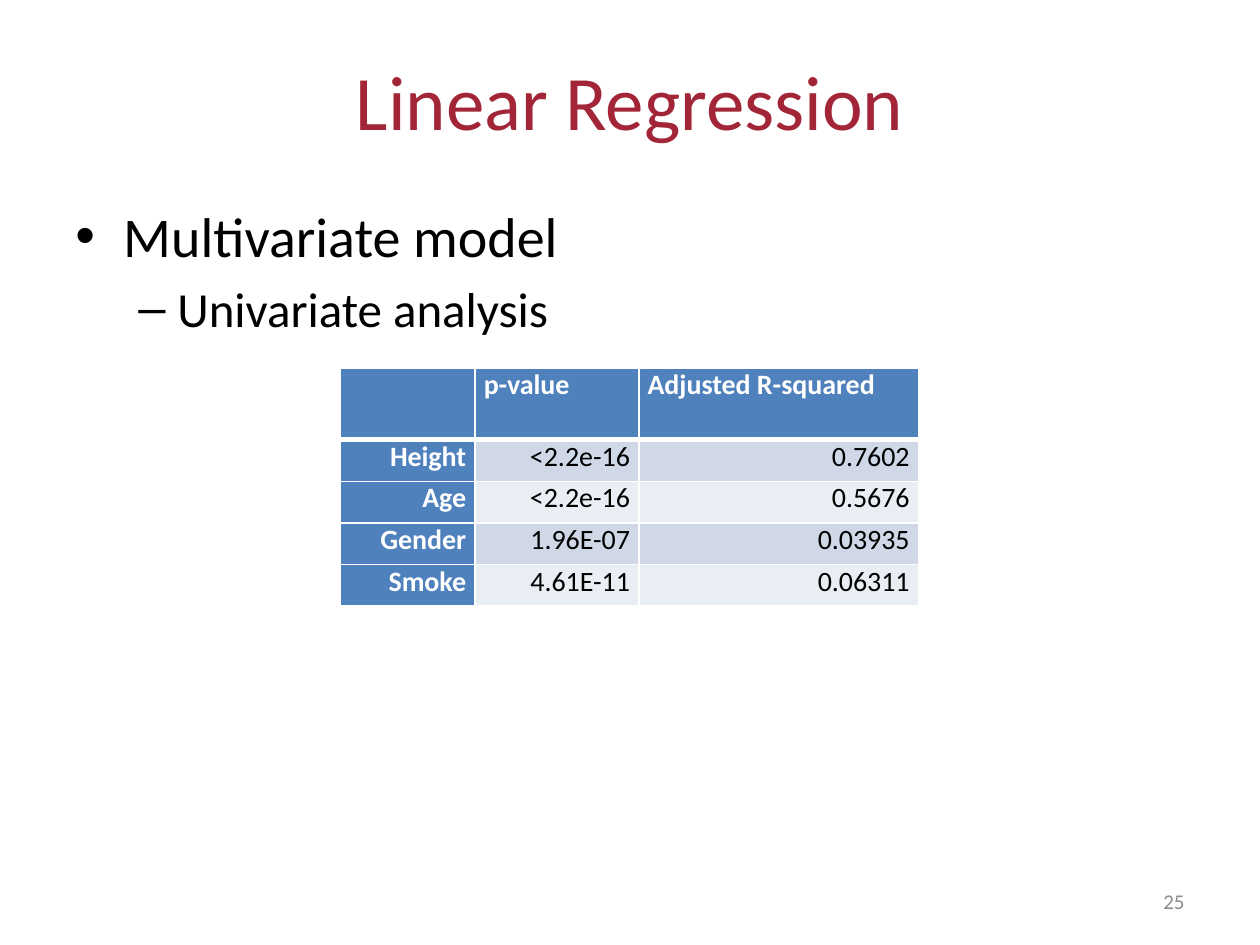
from dataclasses import dataclass

from lxml import etree
from pptx import Presentation
from pptx.dml.color import RGBColor
from pptx.enum.text import MSO_ANCHOR, PP_ALIGN
from pptx.oxml.ns import qn
from pptx.util import Inches, Pt

LEFT, CENTER, RIGHT = PP_ALIGN.LEFT, PP_ALIGN.CENTER, PP_ALIGN.RIGHT
TOP, MIDDLE = MSO_ANCHOR.TOP, MSO_ANCHOR.MIDDLE
TITLE_ONLY_LAYOUT = 5


@dataclass(frozen=True)
class Theme:
    font: str = "Calibri"
    title: str = "A32638"
    text: str = "000000"
    muted: str = "8C8C8C"
    header: str = "4F81BD"
    light: str = "FFFFFF"
    bands: tuple = ("D0D8E8", "E9EDF4")
    title_size: int = 44
    body_sizes: tuple = (32, 28)
    table_size: int = 16
    number_size: int = 12
    border: int = 1
    header_border: int = 3


def write_text(paragraph, text, *, font, size, color, bold=False, align=LEFT):
    paragraph.alignment = align
    run = paragraph.add_run()
    run.text = text
    run.font.name = font
    run.font.size = Pt(size)
    run.font.bold = bold
    run.font.color.rgb = RGBColor.from_string(color)


def set_bullet(paragraph, symbol, indent, hanging):
    properties = paragraph._p.get_or_add_pPr()
    properties.set("marL", str(Inches(indent)))
    properties.set("indent", str(-Inches(hanging)))
    font = etree.SubElement(properties, qn("a:buFont"))
    font.set("typeface", "Arial")
    etree.SubElement(properties, qn("a:buChar")).set("char", symbol)


def set_borders(cell, color, widths):
    properties = cell._tc.get_or_add_tcPr()
    for side, width in widths.items():
        line = etree.SubElement(properties, qn(f"a:ln{side}"), w=str(Pt(width)))
        fill = etree.SubElement(line, qn("a:solidFill"))
        etree.SubElement(fill, qn("a:srgbClr"), val=color)


class SlideBuilder:
    """Places elements by shares of the slide's width and height."""

    def __init__(self, presentation, theme):
        self.theme = theme
        self.width = presentation.slide_width
        self.height = presentation.slide_height
        layout = presentation.slide_layouts[TITLE_ONLY_LAYOUT]
        self.slide = presentation.slides.add_slide(layout)

    def box(self, left, top, width, height):
        return (round(left * self.width), round(top * self.height),
                round(width * self.width), round(height * self.height))

    def title(self, text, area):
        shape = self.slide.shapes.title
        shape.left, shape.top, shape.width, shape.height = self.box(*area)
        shape.text_frame.vertical_anchor = MIDDLE
        write_text(shape.text_frame.paragraphs[0], text, font=self.theme.font,
                   size=self.theme.title_size, color=self.theme.title, align=CENTER)

    def text_box(self, area, anchor=TOP):
        frame = self.slide.shapes.add_textbox(*self.box(*area)).text_frame
        frame.word_wrap = True
        frame.vertical_anchor = anchor
        return frame

    def bullets(self, items, area):
        bullet_styles = (("•", 0.38, 0.38), ("–", 0.81, 0.31))
        frame = self.text_box(area)
        for index, (level, text) in enumerate(items):
            paragraph = frame.add_paragraph() if index else frame.paragraphs[0]
            size = self.theme.body_sizes[level]
            paragraph.level = level
            if index:
                paragraph.space_before = Pt(0.2 * size)
            set_bullet(paragraph, *bullet_styles[level])
            write_text(paragraph, text, font=self.theme.font, size=size,
                       color=self.theme.text)

    def slide_number(self, text, area):
        frame = self.text_box(area, MIDDLE)
        write_text(frame.paragraphs[0], text, font=self.theme.font,
                   size=self.theme.number_size, color=self.theme.muted, align=RIGHT)

    def table(self, rows, area, column_widths, row_heights):
        frame = self.slide.shapes.add_table(len(rows), len(rows[0]), *self.box(*area))
        table = frame.table
        table.first_row = table.horz_banding = False
        for column, width in zip(table.columns, column_widths):
            column.width = Inches(width)
        for row, height in zip(table.rows, row_heights):
            row.height = Inches(height)
        for row_index, values in enumerate(rows):
            for column_index, value in enumerate(values):
                cell = table.cell(row_index, column_index)
                self.table_cell(cell, value, row_index, column_index)

    def table_cell(self, cell, value, row, column):
        theme = self.theme
        is_header = row == 0 or column == 0
        cell.margin_left = cell.margin_right = Inches(0.07)
        cell.margin_top = cell.margin_bottom = 0
        set_borders(cell, theme.light, {
            "L": theme.border,
            "R": theme.border,
            "T": theme.header_border if row == 1 else theme.border,
            "B": theme.header_border if row == 0 else theme.border,
        })
        fill = theme.header if is_header else theme.bands[(row - 1) % 2]
        cell.fill.solid()
        cell.fill.fore_color.rgb = RGBColor.from_string(fill)
        if value:
            write_text(cell.text_frame.paragraphs[0], value, font=theme.font,
                       size=theme.table_size, bold=is_header,
                       color=theme.light if is_header else theme.text,
                       align=RIGHT if row else LEFT)


def main():
    presentation = Presentation()
    presentation.slide_width, presentation.slide_height = Inches(10), Inches(7.5)
    builder = SlideBuilder(presentation, Theme())

    # Title and outline
    builder.title("Linear Regression", (0.05, 0.17 / 7.5, 0.9, 1.25 / 7.5))
    builder.bullets([(0, "Multivariate model"), (1, "Univariate analysis")],
                    (0.05, 1.55 / 7.5, 0.9, 0.66))

    # Slide number
    builder.slide_number("25", (0.717, 6.95 / 7.5, 0.233, 0.4 / 7.5))

    # Results of each single-variable model
    results = [
        ("", "p-value", "Adjusted R-squared"),
        ("Height", "<2.2e-16", "0.7602"),
        ("Age", "<2.2e-16", "0.5676"),
        ("Gender", "1.96E-07", "0.03935"),
        ("Smoke", "4.61E-11", "0.06311"),
    ]
    builder.table(results, (0.27, 2.92 / 7.5, 0.459, 1.89 / 7.5),
                  column_widths=(1.07, 1.3, 2.22),
                  row_heights=(0.57, *[0.33] * 4))

    presentation.save("out.pptx")


if __name__ == "__main__":
    main()
